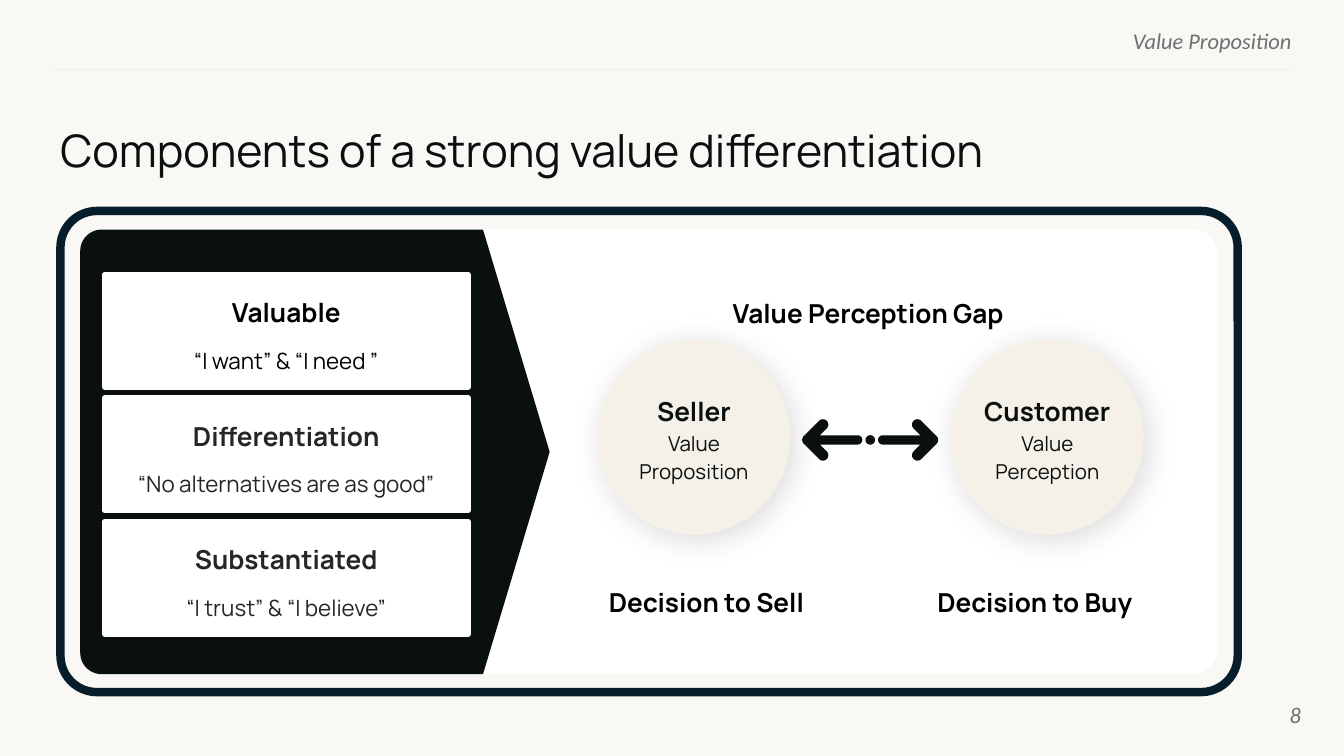
from dataclasses import dataclass
from math import cos, radians, sin, sqrt

from lxml.etree import SubElement
from pptx import Presentation
from pptx.dml.color import RGBColor
from pptx.enum.shapes import MSO_CONNECTOR, MSO_SHAPE
from pptx.enum.text import MSO_ANCHOR, PP_ALIGN
from pptx.oxml.ns import qn
from pptx.util import Pt


@dataclass(frozen=True)
class Theme:
    background: str = "F9F8F5"
    rule: str = "EFEFEF"
    navy: str = "051E2A"
    ink: str = "09100F"
    white: str = "FFFFFF"
    sand: str = "F5F1E8"
    black: str = "000000"
    charcoal: str = "262626"
    grey: str = "6C706F"
    font: str = "Manrope"
    small_font: str = "Calibri"
    title: int = 24
    heading: int = 14
    body: int = 12
    detail: int = 11


def arc(cx, cy, radius, start, end, steps=12):
    """Points along an arc; angles in degrees, y pointing down."""
    angles = [radians(start + (end - start) * i / steps) for i in range(steps + 1)]
    return [(cx + radius * cos(a), cy + radius * sin(a)) for a in angles]


class SlideBuilder:
    def __init__(self, slide, theme):
        self.s = slide
        self.t = theme
        fill = slide.background.fill
        fill.solid()
        fill.fore_color.rgb = RGBColor.from_string(theme.background)

    def paint(self, sp, fill=None, line=None, width=0):
        sp.shadow.inherit = False
        if fill:
            sp.fill.solid()
            sp.fill.fore_color.rgb = RGBColor.from_string(fill)
        else:
            sp.fill.background()
        if line:
            sp.line.color.rgb = RGBColor.from_string(line)
            sp.line.width = Pt(width)
        else:
            sp.line.fill.background()
        return sp

    def shape(self, kind, box, fill=None, line=None, width=0, adjust=()):
        sp = self.s.shapes.add_shape(kind, *map(Pt, box))
        for i, value in enumerate(adjust):
            sp.adjustments[i] = value
        return self.paint(sp, fill, line, width)

    def outline(self, points, fill):
        points = [(Pt(x), Pt(y)) for x, y in points]
        builder = self.s.shapes.build_freeform(*points[0], scale=1.0)
        builder.add_line_segments(points[1:], close=True)
        return self.paint(builder.convert_to_shape(), fill)

    def line(self, x1, y1, x2, y2, color, width):
        c = self.s.shapes.add_connector(MSO_CONNECTOR.STRAIGHT, *map(Pt, (x1, y1, x2, y2)))
        c.line.color.rgb = RGBColor.from_string(color)
        c.line.width = Pt(width)
        SubElement(c.element.spPr, qn("a:effectLst"))

    def soft_shadow(self, sp):
        effects = sp.element.spPr.find(qn("a:effectLst"))
        shadow = SubElement(effects, qn("a:outerShdw"), blurRad=str(Pt(16.9)),
                            dist=str(Pt(3)), dir=str(45 * 60000), rotWithShape="0")
        color = SubElement(shadow, qn("a:srgbClr"), val=self.t.black)
        SubElement(color, qn("a:alpha"), val="14000")

    def frame(self, sp, insets=(0, 0), anchor=MSO_ANCHOR.MIDDLE):
        tf = sp.text_frame
        tf.word_wrap = True
        tf.margin_left = tf.margin_right = Pt(insets[0])
        tf.margin_top = tf.margin_bottom = Pt(insets[1])
        tf.vertical_anchor = anchor
        return tf

    def paragraph(self, tf, align=PP_ALIGN.CENTER, spacing=None, first=False):
        p = tf.paragraphs[0] if first else tf.add_paragraph()
        p.alignment = align
        if spacing:
            p.line_spacing = spacing
        return p

    def run(self, p, text, size, color, bold=False, italic=False, font=None):
        r = p.add_run()
        r.text = text
        r.font.size = Pt(size)
        r.font.name = font or self.t.font
        r.font.bold = bold
        r.font.italic = italic
        r.font.color.rgb = RGBColor.from_string(color)

    def text(self, box, text, size, color, align=PP_ALIGN.CENTER,
             anchor=MSO_ANCHOR.MIDDLE, spacing=None, **style):
        tf = self.frame(self.s.shapes.add_textbox(*map(Pt, box)), anchor=anchor)
        self.run(self.paragraph(tf, align, spacing, True), text, size, color, **style)

    def card(self, box, heading, quote, color):
        sp = self.shape(MSO_SHAPE.RECTANGLE, box, self.t.white, self.t.white, 3)
        tf = self.frame(sp, (7.2, 3.6))
        self.run(self.paragraph(tf, spacing=1.27, first=True), heading,
                 self.t.heading, color, bold=True)
        self.run(self.paragraph(tf, spacing=1.7), quote, self.t.body, color)

    def circle(self, box, heading, detail):
        sp = self.shape(MSO_SHAPE.OVAL, box, self.t.sand)
        self.soft_shadow(sp)
        p = self.paragraph(self.frame(sp), spacing=1.15, first=True)
        self.run(p, heading, self.t.heading, self.t.ink, bold=True)
        p.add_line_break()
        self.run(p, detail, self.t.detail, self.t.ink)

    def arrow(self, tip, y, direction):
        """Arrow with rounded ends; direction 1 runs right from its tip, -1 left."""
        r, barb, half, length = 2.9, 8.2, 2.5, 32.2
        notch = r + r * sqrt(2) + half
        points = (arc(length - half, 0, half, 90, -90)
                  + [(notch, -half)]
                  + arc(r + barb, -barb, r, 45, -135)
                  + arc(r, 0, r, -135, -225)
                  + arc(r + barb, barb, r, 135, -45)
                  + [(notch, half)])
        self.outline([(tip + direction * px, y + py) for px, py in points], self.t.ink)


def main():
    prs = Presentation()
    prs.slide_width, prs.slide_height = Pt(720), Pt(405)
    t = Theme()
    b = SlideBuilder(prs.slides.add_slide(prs.slide_layouts[6]), t)

    # Header and title
    small = dict(align=PP_ALIGN.RIGHT, italic=True, font=t.small_font)
    b.text((414.7, 14.4, 277.2, 13), "Value Proposition", t.body, t.grey,
           anchor=MSO_ANCHOR.TOP, **small)
    b.line(691.9, 37.4, 28.1, 37.4, t.rule, 0.75)
    b.text((32.4, 65.5, 664.6, 36.7), "Components of a strong value differentiation",
           t.title, t.ink, align=PP_ALIGN.LEFT, anchor=MSO_ANCHOR.TOP)

    # Outer frame and white panel, rounded on its right side
    b.shape(MSO_SHAPE.ROUNDED_RECTANGLE, (32.4, 113, 630.7, 257.8),
            line=t.navy, width=4.5, adjust=[0.076])
    panel = b.shape(MSO_SHAPE.ROUND_2_SAME_RECTANGLE, (336.2, 45.4, 238.3, 393.1),
                    t.white, adjust=[0.055, 0])
    panel.rotation = 90

    # Dark pointer behind the cards
    left, top, bottom, radius = 43, 123, 361.2, 11.5
    b.outline(arc(left + radius, bottom - radius, radius, 90, 180)
              + arc(left + radius, top + radius, radius, 180, 270)
              + [(258.8, top), (294.5, (top + bottom) / 2), (258.8, bottom)], t.ink)

    # Component cards
    cards = [("Valuable", "“I want” & “I need ”", t.black),
             ("Differentiation", "“No alternatives are as good”", t.charcoal),
             ("Substantiated", "“I trust” & “I believe”", t.charcoal)]
    for i, card in enumerate(cards):
        b.card((56.1, 147 + 66.2 * i, 194.6, 60.4), *card)

    # Seller and customer
    sides = [(320.2, "Seller", "Value Proposition", 320.2, "Decision to Sell"),
             (509.5, "Customer", "Value Perception", 496.1, "Decision to Buy")]
    for x, who, detail, label_x, decision in sides:
        b.circle((x, 182, 103.2, 104.4), who, detail)
        b.text((label_x, 314.2, 116.6, 17.2), decision, t.heading, t.black, bold=True)
    b.text((382, 154, 166.3, 17.2), "Value Perception Gap", t.heading, t.black,
           spacing=1.63, bold=True)

    # Gap between them: two arrows around a dot
    middle, y = 466.2, 235.7
    for direction in (1, -1):
        b.arrow(middle - direction * 36.4, y, direction)
    b.shape(MSO_SHAPE.OVAL, (middle - 2.6, y - 2.6, 5.2, 5.2), t.ink)

    # Page number
    b.text((653.8, 367.5, 43.2, 31), "8", t.body, t.grey, **small)

    prs.save("out.pptx")


if __name__ == "__main__":
    main()
